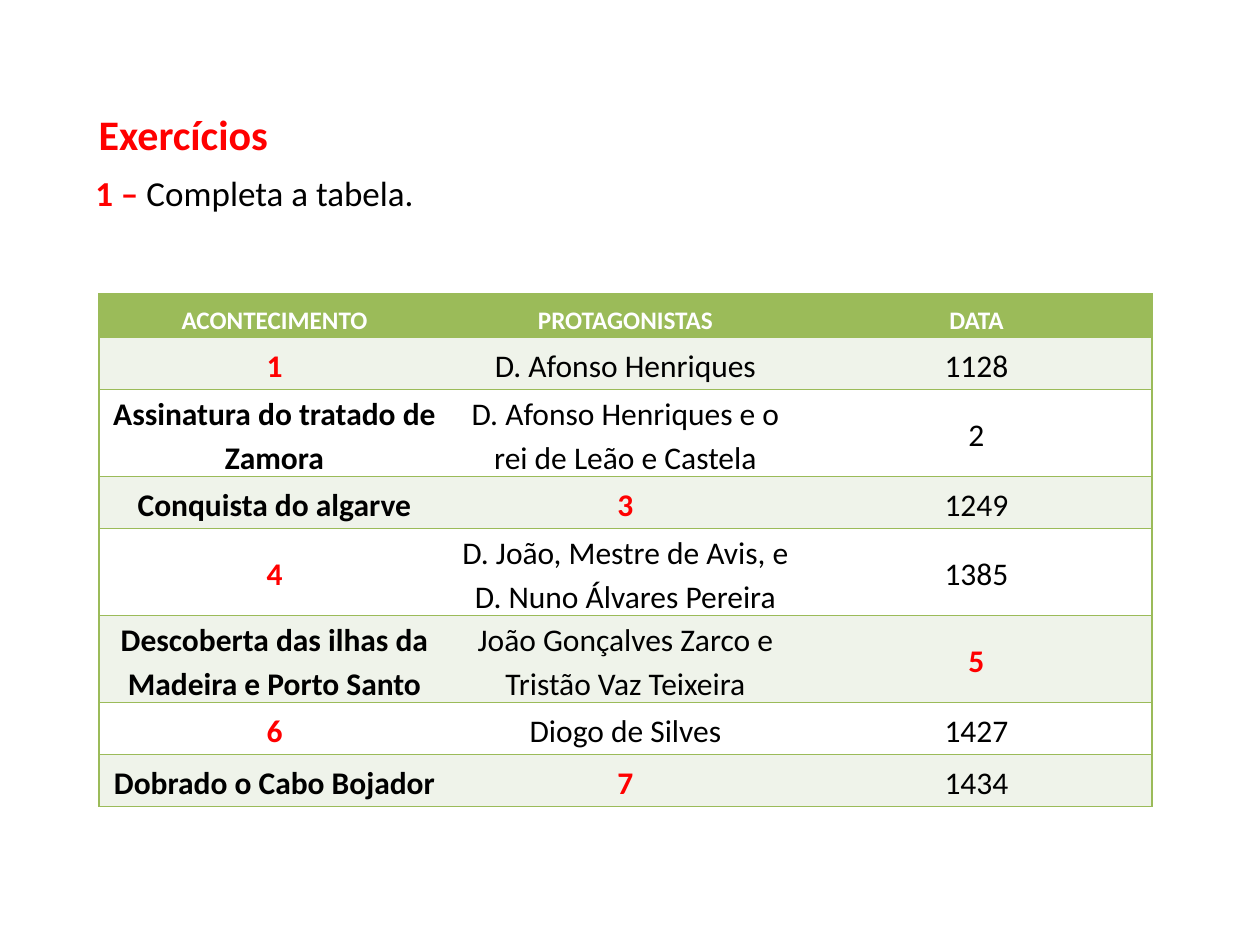
from dataclasses import dataclass

from lxml import etree
from pptx import Presentation
from pptx.dml.color import RGBColor
from pptx.enum.text import MSO_ANCHOR, MSO_AUTO_SIZE, PP_ALIGN
from pptx.oxml.ns import qn
from pptx.util import Emu, Pt

CENTER, LEFT = PP_ALIGN.CENTER, PP_ALIGN.LEFT
TOP, MIDDLE = MSO_ANCHOR.TOP, MSO_ANCHOR.MIDDLE
NO_AUTOFIT = MSO_AUTO_SIZE.NONE

FONT = "Calibri"
RED, BLACK, WHITE = "FF0000", "000000", "FFFFFF"
GREEN, PALE_GREEN = "9BBB59", "EFF3EA"
PX_PER_INCH = 126
TABLE_LEFT, TABLE_TOP, COLUMN_WIDTH = 99, 294, 351
HEADER_HEIGHT, SINGLE_HEIGHT, DOUBLE_HEIGHT = 43, 52, 87


@dataclass
class Entry:
    text: str
    color: str = BLACK
    bold: bool = False


@dataclass
class Row:
    height: int
    entries: list[Entry]


def event(text: str) -> Entry:
    return Entry(text, bold=True)


def blank(number: str) -> Entry:
    """A numbered gap that the pupil fills in."""
    return Entry(number, RED, True)


HEADINGS = ["acontecimento", "protagonistas", "data"]
ROWS = [
    Row(HEADER_HEIGHT, [Entry(h, WHITE, True) for h in HEADINGS]),
    Row(SINGLE_HEIGHT, [blank("1"), Entry("D. Afonso Henriques"), Entry("1128")]),
    Row(DOUBLE_HEIGHT, [event("Assinatura do tratado de Zamora"),
                        Entry("D. Afonso Henriques e o rei de Leão e Castela"),
                        Entry("2")]),
    Row(SINGLE_HEIGHT, [event("Conquista do algarve"), blank("3"), Entry("1249")]),
    Row(DOUBLE_HEIGHT, [blank("4"),
                        Entry("D. João, Mestre de Avis, e D. Nuno Álvares Pereira"),
                        Entry("1385")]),
    Row(DOUBLE_HEIGHT, [event("Descoberta das ilhas da Madeira e Porto Santo"),
                        Entry("João Gonçalves Zarco e Tristão Vaz Teixeira"),
                        blank("5")]),
    Row(SINGLE_HEIGHT, [blank("6"), Entry("Diogo de Silves"), Entry("1427")]),
    Row(SINGLE_HEIGHT, [event("Dobrado o Cabo Bojador"), blank("7"), Entry("1434")]),
]


def px(n: int) -> Emu:
    return Emu(n * 914400 // PX_PER_INCH)


def rgb(color: str) -> RGBColor:
    return RGBColor.from_string(color)


def style_font(font, size: int, color: str, bold: bool) -> None:
    font.name = FONT
    font.size = Pt(size)
    font.bold = bold
    font.color.rgb = rgb(color)


def set_borders(cell, visible: set[str]) -> None:
    """Draw the visible sides (L, R, T, B) and hide the others."""
    tc_pr = cell._tc.get_or_add_tcPr()
    for side in "LRTB":
        ln = etree.SubElement(tc_pr, qn(f"a:ln{side}"), w=str(Pt(1)))
        if side in visible:
            fill = etree.SubElement(ln, qn("a:solidFill"))
            etree.SubElement(fill, qn("a:srgbClr"), val=GREEN)
        else:
            etree.SubElement(ln, qn("a:noFill"))


def add_title(s) -> None:
    title = s.shapes.title
    title.left, title.top, title.width, title.height = px(86), px(102), px(287), px(63)
    tf = title.text_frame
    tf.auto_size = NO_AUTOFIT
    tf.vertical_anchor = TOP
    p = tf.paragraphs[0]
    p.text = "Exercícios"
    p.alignment = LEFT
    style_font(p.font, 24, RED, True)


def add_instruction(s) -> None:
    tf = s.shapes.add_textbox(px(83), px(165), px(478), px(55)).text_frame
    tf.word_wrap = True
    p = tf.paragraphs[0]
    for text, color, bold in [("1 – ", RED, True), ("Completa a tabela.", BLACK, False)]:
        r = p.add_run()
        r.text = text
        style_font(r.font, 20, color, bold)


def fill_cell(cell, entry: Entry, fill: str, is_header: bool) -> None:
    cell.margin_left = cell.margin_right = px(8)
    cell.margin_top = cell.margin_bottom = 0
    cell.vertical_anchor = TOP if is_header else MIDDLE
    cell.fill.solid()
    cell.fill.fore_color.rgb = rgb(fill)
    p = cell.text_frame.paragraphs[0]
    p.text = entry.text
    p.alignment = CENTER
    p.line_spacing = 1.15
    style_font(p.font, 18, entry.color, entry.bold)
    if is_header:
        p.font._element.set("cap", "small")


def add_events_table(s) -> None:
    last = len(HEADINGS) - 1
    table = s.shapes.add_table(
        len(ROWS), len(HEADINGS), px(TABLE_LEFT), px(TABLE_TOP),
        px(COLUMN_WIDTH * len(HEADINGS)), px(sum(row.height for row in ROWS))).table
    table.first_row = table.horz_banding = False
    for column in table.columns:
        column.width = px(COLUMN_WIDTH)
    for i, row in enumerate(ROWS):
        table.rows[i].height = px(row.height)
        fill = GREEN if i == 0 else PALE_GREEN if i % 2 else WHITE
        for j, entry in enumerate(row.entries):
            cell = table.cell(i, j)
            set_borders(cell, {"T", "B"} | ({"L"} if j == 0 else set())
                        | ({"R"} if j == last else set()))
            fill_cell(cell, entry, fill, i == 0)


def main() -> None:
    prs = Presentation()
    prs.slide_width, prs.slide_height = px(1260), px(945)
    s = prs.slides.add_slide(prs.slide_layouts[5])
    add_title(s)
    add_instruction(s)
    add_events_table(s)
    prs.save("out.pptx")


if __name__ == "__main__":
    main()
